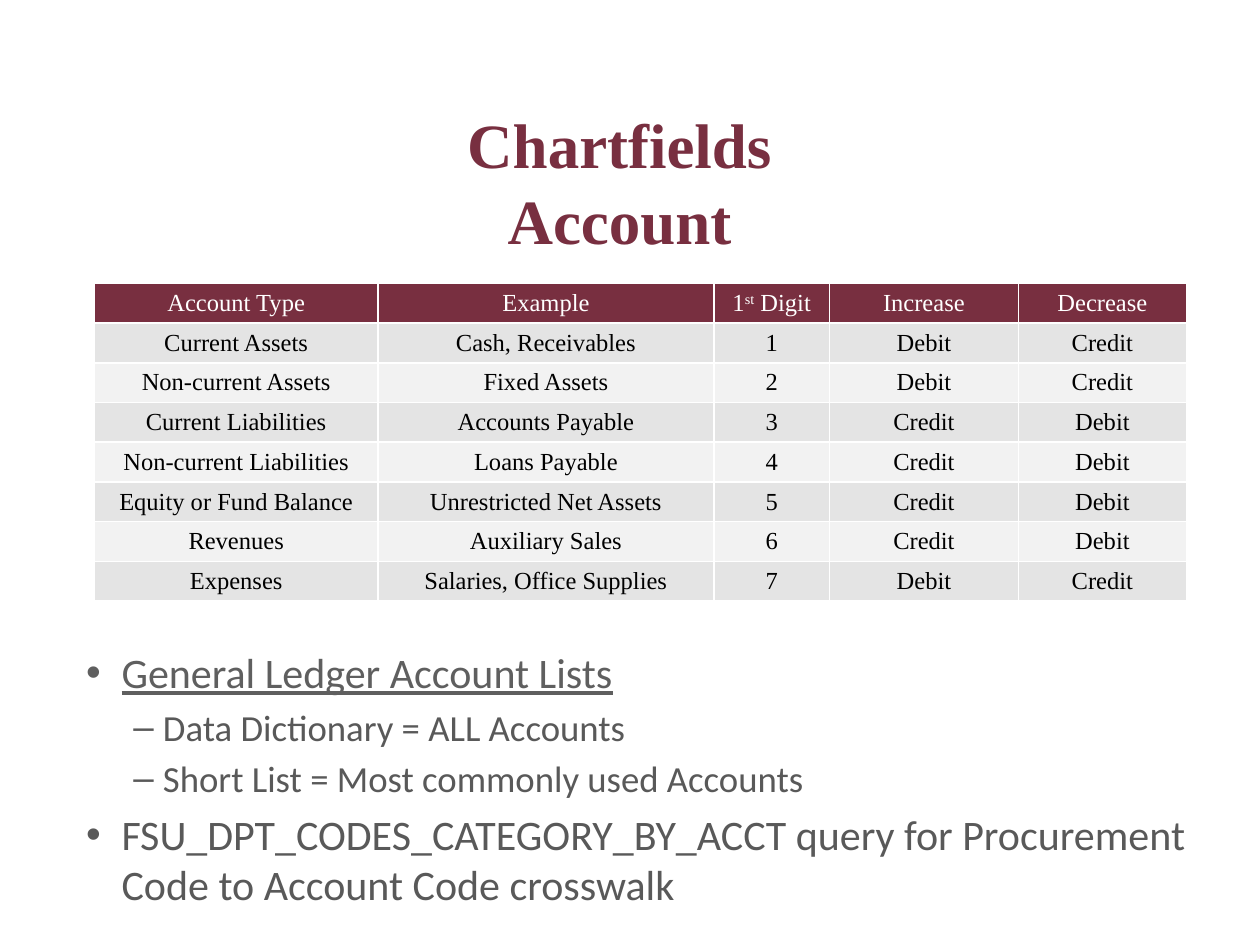
from lxml.etree import SubElement
from pptx import Presentation
from pptx.dml.color import RGBColor
from pptx.enum.text import MSO_ANCHOR, MSO_AUTO_SIZE, PP_ALIGN
from pptx.oxml.ns import qn
from pptx.util import Pt

GARNET = RGBColor(0x78, 0x2F, 0x40)
WHITE = RGBColor(0xFF, 0xFF, 0xFF)
BLACK = RGBColor(0, 0, 0)
DARK_BAND = RGBColor(0xE4, 0xE4, 0xE4)
LIGHT_BAND = RGBColor(0xF2, 0xF2, 0xF2)
LINK_GRAY = RGBColor(0x5F, 0x5F, 0x5F)
TEXT_GRAY = RGBColor(0x59, 0x59, 0x59)
SERIF = "Times New Roman"


def add_text(paragraph, text, size, color, font=SERIF, bold=False, underline=False, baseline=0):
    run = paragraph.add_run()
    run.text = text
    run.font.name = font
    run.font.size = Pt(size)
    run.font.color.rgb = color
    run.font.bold = bold
    run.font.underline = underline
    if baseline:
        run.font._element.set("baseline", str(baseline * 1000))


def add_borders(cell, color, width):
    properties = cell._tc.get_or_add_tcPr()
    for side in ("lnL", "lnR", "lnT", "lnB"):
        line = SubElement(properties, qn(f"a:{side}"), w=str(Pt(width)))
        fill = SubElement(line, qn("a:solidFill"))
        SubElement(fill, qn("a:srgbClr"), val=str(color))


presentation = Presentation()
presentation.slide_width = Pt(720)
presentation.slide_height = Pt(540)
slide = presentation.slides.add_slide(presentation.slide_layouts[1])

title = slide.shapes.title
title.left, title.top, title.width, title.height = Pt(91.5), Pt(66.25), Pt(525), Pt(84.25)
title_frame = title.text_frame
title_frame.auto_size = MSO_AUTO_SIZE.NONE
title_frame.vertical_anchor = MSO_ANCHOR.BOTTOM
title_frame.margin_left = title_frame.margin_right = Pt(21.6)
title_paragraph = title_frame.paragraphs[0]
title_paragraph.alignment = PP_ALIGN.CENTER
title_paragraph.line_spacing = Pt(43.5)
add_text(title_paragraph, "Chartfields", 36, GARNET, bold=True)
title_paragraph.add_line_break()
add_text(title_paragraph, "Account", 36, GARNET, bold=True)

body = slide.placeholders[1]
body.left, body.top, body.width, body.height = Pt(42), Pt(366), Pt(648), Pt(156)
body_frame = body.text_frame
body_frame.auto_size = MSO_AUTO_SIZE.NONE
bullets = [
    (0, "General Ledger Account Lists", LINK_GRAY, True),
    (1, "Data Dictionary = ALL Accounts", TEXT_GRAY, False),
    (1, "Short List = Most commonly used Accounts", TEXT_GRAY, False),
    (0, "FSU_DPT_CODES_CATEGORY_BY_ACCT query for Procurement Code to Account Code crosswalk",
     TEXT_GRAY, False),
]
level_formats = [(24, 20.25, -20.25, "•"), (21, 43.9, -16.9, "–")]
for index, (level, text, color, underline) in enumerate(bullets):
    paragraph = body_frame.add_paragraph() if index else body_frame.paragraphs[0]
    size, margin, indent, symbol = level_formats[level]
    paragraph.level = level
    properties = paragraph._p.get_or_add_pPr()
    properties.set("marL", str(Pt(margin)))
    properties.set("indent", str(Pt(indent)))
    SubElement(properties, qn("a:buChar"), char=symbol)
    paragraph.space_before = Pt(size * 0.2 if index else 0)
    add_text(paragraph, text, size, color, font="Calibri", underline=underline)

rows = [
    ("Account Type", "Example", "1st Digit", "Increase", "Decrease"),
    ("Current Assets", "Cash, Receivables", "1", "Debit", "Credit"),
    ("Non-current Assets", "Fixed Assets", "2", "Debit", "Credit"),
    ("Current Liabilities", "Accounts Payable", "3", "Credit", "Debit"),
    ("Non-current Liabilities", "Loans Payable", "4", "Credit", "Debit"),
    ("Equity or Fund Balance", "Unrestricted Net Assets", "5", "Credit", "Debit"),
    ("Revenues", "Auxiliary Sales", "6", "Credit", "Debit"),
    ("Expenses", "Salaries, Office Supplies", "7", "Debit", "Credit"),
]
column_widths = [162, 192, 66, 108, 96]
row_height = 22.7
table = slide.shapes.add_table(
    len(rows), len(column_widths), Pt(54), Pt(162),
    Pt(sum(column_widths)), Pt(row_height * len(rows))).table
for column, width in zip(table.columns, column_widths):
    column.width = Pt(width)
for row_index, values in enumerate(rows):
    table.rows[row_index].height = Pt(row_height)
    band = DARK_BAND if row_index % 2 else LIGHT_BAND
    text_color = BLACK if row_index else WHITE
    for column_index, value in enumerate(values):
        cell = table.cell(row_index, column_index)
        add_borders(cell, WHITE, 1)
        cell.fill.solid()
        cell.fill.fore_color.rgb = band if row_index else GARNET
        cell.vertical_anchor = MSO_ANCHOR.MIDDLE
        cell.margin_top = cell.margin_bottom = Pt(3)
        paragraph = cell.text_frame.paragraphs[0]
        paragraph.alignment = PP_ALIGN.CENTER
        before, ordinal, after = value.partition("st Digit")
        add_text(paragraph, before, 14, text_color)
        if ordinal:
            add_text(paragraph, "st", 14, text_color, baseline=30)
            add_text(paragraph, " Digit", 14, text_color)

presentation.save("out.pptx")
